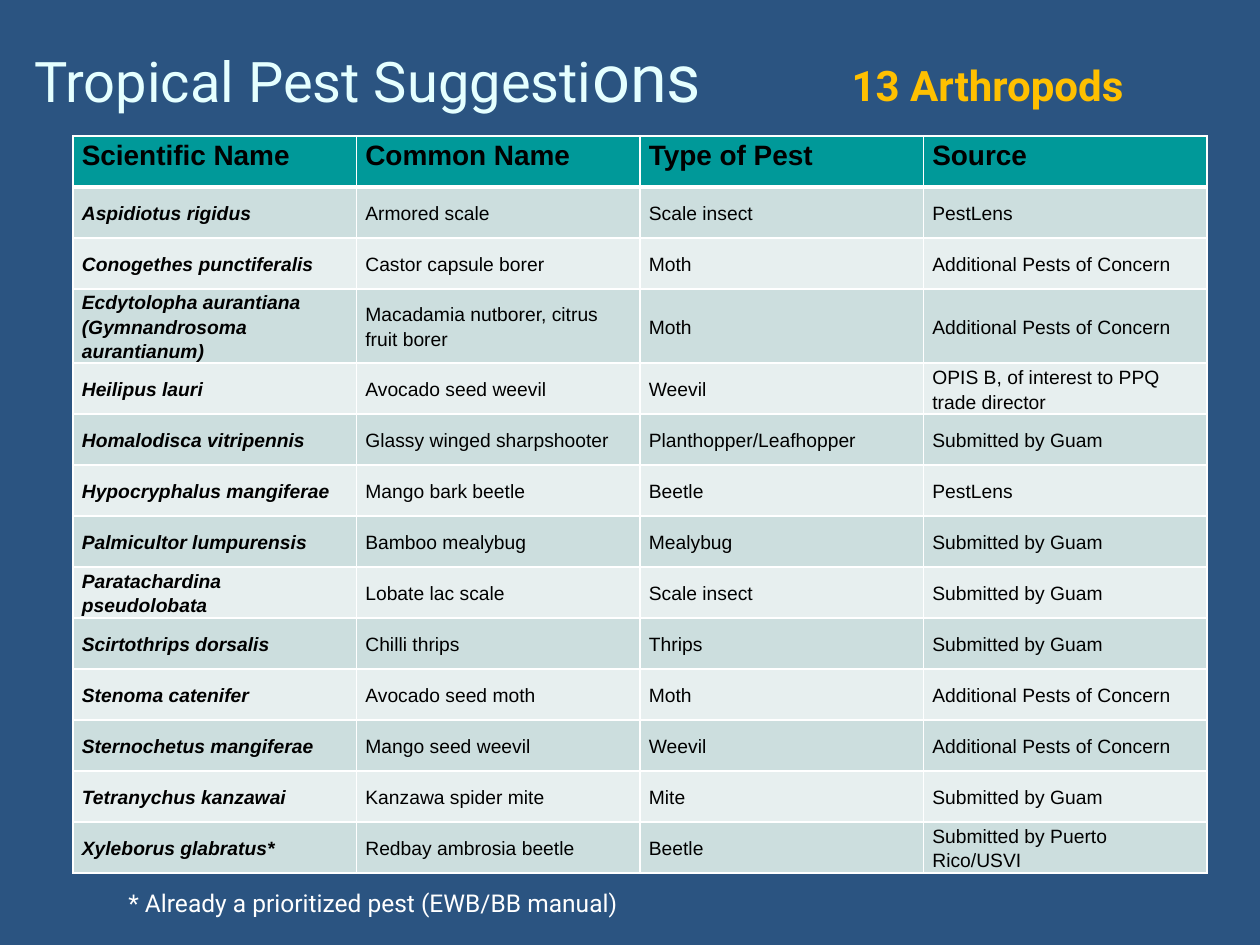
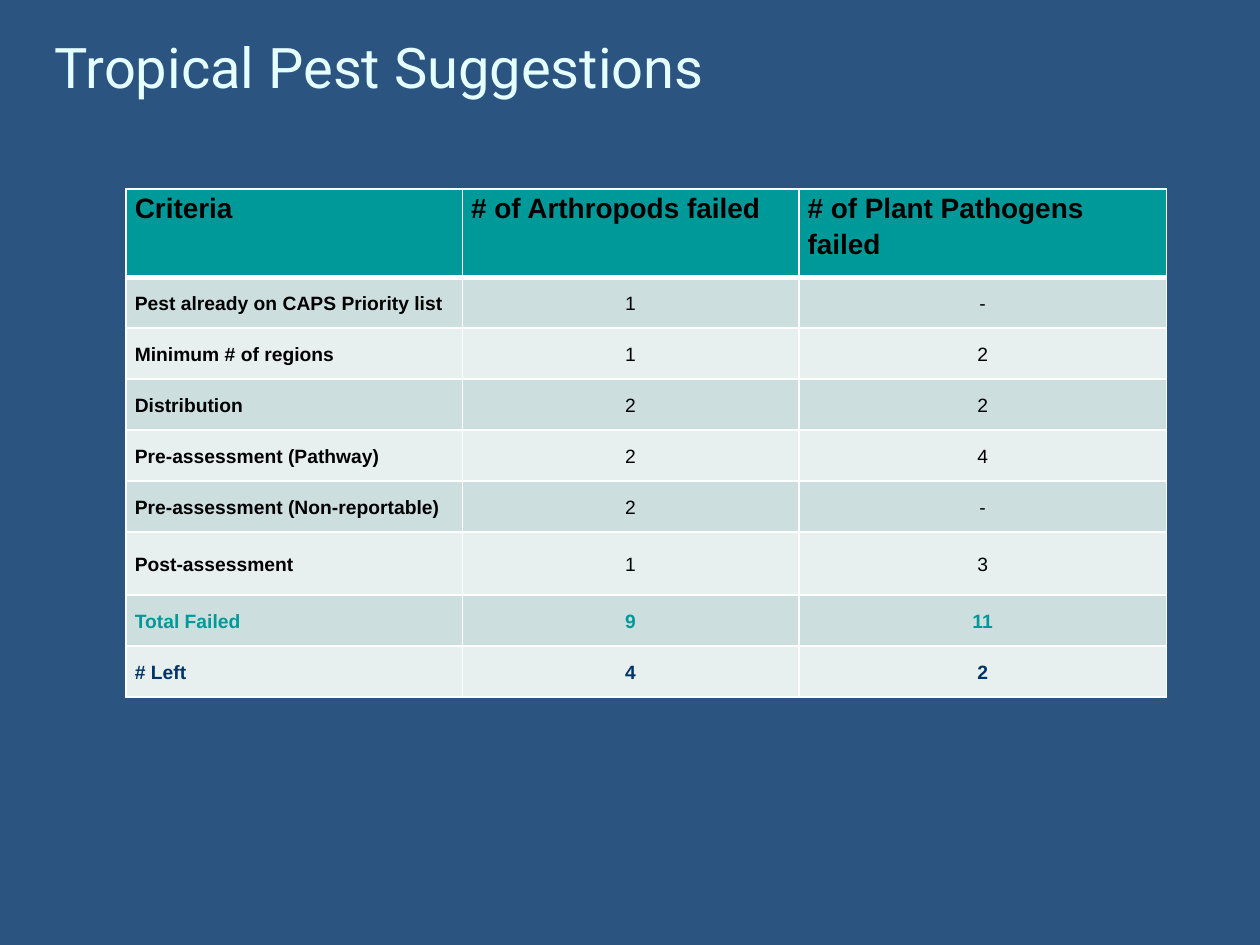
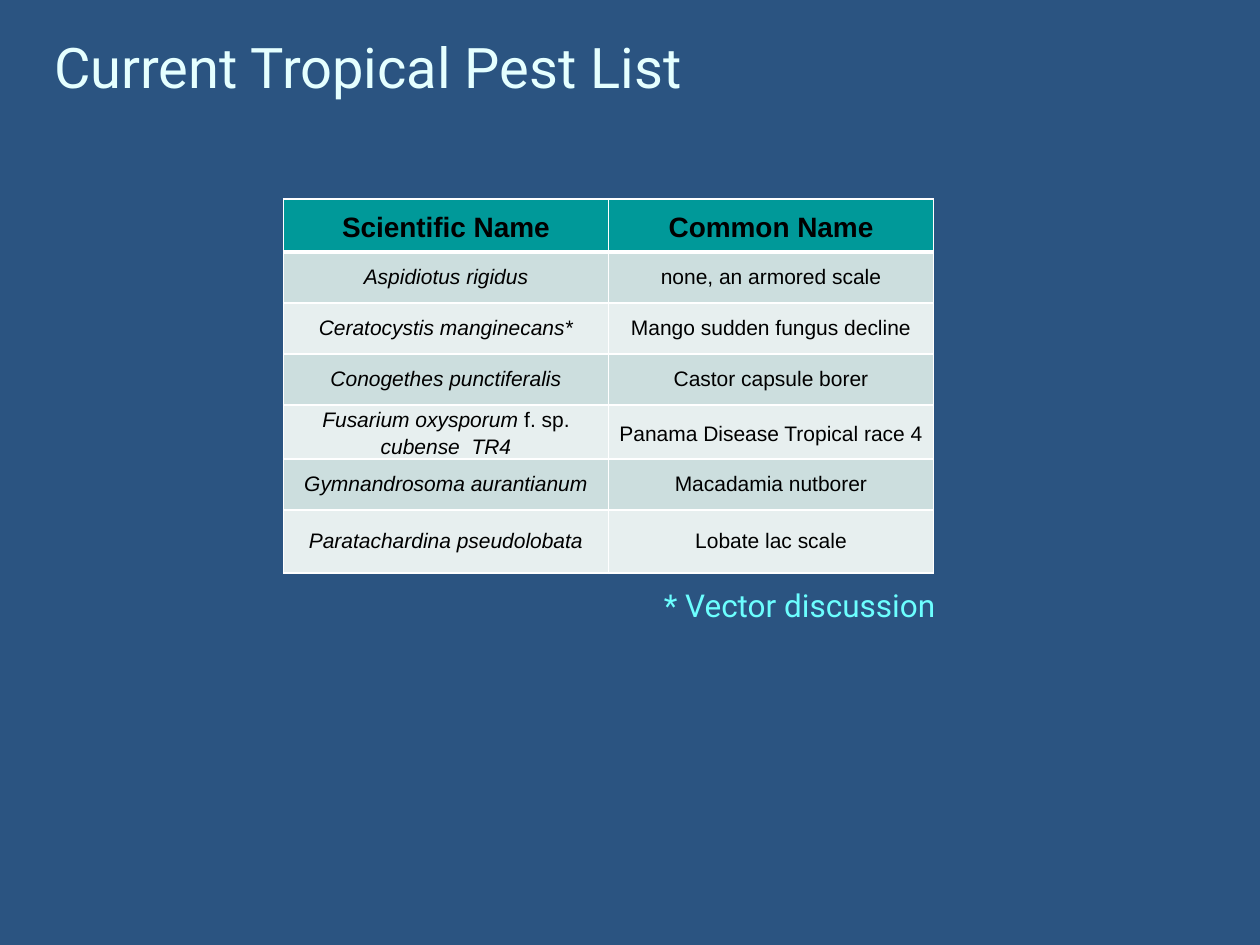
from dataclasses import dataclass
from lxml.etree import SubElement
from pptx import Presentation
from pptx.dml.color import RGBColor as RGB
from pptx.enum.text import MSO_ANCHOR as Anchor, MSO_AUTO_SIZE as AutoSize, PP_ALIGN as Align
from pptx.oxml.ns import qn
from pptx.util import Inches, Pt


@dataclass(frozen=True)
class Theme:
    heading_font: str = "Roboto"
    table_font: str = "Arial"
    background: str = "2B5481"
    title: str = "E5FFFF"
    header: str = "009999"
    bands: tuple = ("CCDEDE", "E7EFEF")
    ink: str = "000000"
    white: str = "FFFFFF"
    amber: str = "FFC000"
    cyan: str = "6CFFFF"
    navy: str = "003366"
    title_size: int = 32
    header_size: int = 16
    thin: int = 1
    thick: int = 3
    line_spacing: float = 1.15
    cell_inset: float = 0.07
    row: float = 5.67 / 14


THEME = Theme()
TITLE_BOX = (0.33, 0.15, 9, 0.75)

ARTHROPODS = [
    ("Scientific Name", "Common Name", "Type of Pest", "Source"),
    ("Aspidiotus rigidus", "Armored scale", "Scale insect", "PestLens"),
    ("Conogethes punctiferalis", "Castor capsule borer", "Moth", "Additional Pests of Concern"),
    ("Ecdytolopha aurantiana (Gymnandrosoma aurantianum)",
     "Macadamia nutborer, citrus fruit borer", "Moth", "Additional Pests of Concern"),
    ("Heilipus lauri", "Avocado seed weevil", "Weevil",
     "OPIS B, of interest to PPQ trade director"),
    ("Homalodisca vitripennis", "Glassy winged sharpshooter", "Planthopper/Leafhopper",
     "Submitted by Guam"),
    ("Hypocryphalus mangiferae", "Mango bark beetle", "Beetle", "PestLens"),
    ("Palmicultor lumpurensis", "Bamboo mealybug", "Mealybug", "Submitted by Guam"),
    ("Paratachardina pseudolobata", "Lobate lac scale", "Scale insect", "Submitted by Guam"),
    ("Scirtothrips dorsalis", "Chilli thrips", "Thrips", "Submitted by Guam"),
    ("Stenoma catenifer", "Avocado seed moth", "Moth", "Additional Pests of Concern"),
    ("Sternochetus mangiferae", "Mango seed weevil", "Weevil", "Additional Pests of Concern"),
    ("Tetranychus kanzawai", "Kanzawa spider mite", "Mite", "Submitted by Guam"),
    ("Xyleborus glabratus*", "Redbay ambrosia beetle", "Beetle",
     "Submitted by Puerto Rico/USVI"),
]

CRITERIA = [
    ("Criteria", "# of Arthropods failed", "# of Plant Pathogens failed"),
    ("Pest already on CAPS Priority list", "1", "-"),
    ("Minimum # of regions", "1", "2"),
    ("Distribution", "2", "2"),
    ("Pre-assessment (Pathway)", "2", "4"),
    ("Pre-assessment (Non-reportable)", "2", "-"),
    ("Post-assessment", "1", "3"),
    ("Total Failed", "9", "11"),
    ("# Left", "4", "2"),
]

CURRENT_PESTS = [
    ("Scientific Name", "Common Name"),
    ("Aspidiotus rigidus", "none, an armored scale"),
    ("Ceratocystis manginecans*", "Mango sudden fungus decline"),
    ("Conogethes punctiferalis", "Castor capsule borer"),
    (("Fusarium oxysporum ", "f. sp. ", "cubense  TR4"), "Panama Disease Tropical race 4"),
    ("Gymnandrosoma aurantianum", "Macadamia nutborer"),
    ("Paratachardina pseudolobata", "Lobate lac scale"),
]

SLIDES = [
    dict(
        title=[("Tropical Pest Suggesti", THEME.title_size), ("ons", 38)],
        title_box=(0.17, 0.1, 8.83, 1),
        table=dict(rows=ARTHROPODS, corner=(0.58, 1.08), widths=[2.25] * 4, heights={},
                   size=11, bold=True, italic=True),
        notes=[("13 Arthropods", (6.66, 0.42, 2.92, 0.5), 24, THEME.amber, True),
               ("* Already a prioritized pest (EWB/BB manual)", (0.92, 7, 5.92, 0.34),
                14, THEME.white, False)],
    ),
    dict(
        title=[("Tropical Pest Suggestions", THEME.title_size)],
        table=dict(rows=CRITERIA, corner=(1, 1.5), widths=[2.67, 2.67, 2.92],
                   heights={0: 0.7, 6: 0.5}, size=11, bold=True, centred=(1, 2),
                   totals={7: THEME.header, 8: THEME.navy}),
        notes=[],
    ),
    dict(
        title=[("Current Tropical Pest List", THEME.title_size)],
        table=dict(rows=CURRENT_PESTS, corner=(2.25, 1.58), widths=[2.58, 2.58],
                   heights={0: 0.42, 6: 0.5}, size=12, italic=True, centred=(0, 1),
                   centred_header=True, spacing=1.0),
        notes=[("* Vector discussion", (5.17, 4.6, 2.41, 0.4), 18, THEME.cyan, False)],
    ),
]


def style(run, font, size, colour, bold=False, italic=False):
    run.font.name = font
    run.font.size = Pt(size)
    run.font.color.rgb = RGB.from_string(colour)
    run.font.bold = bold
    run.font.italic = italic


def add_title(slide, pieces, box):
    title = slide.shapes.title
    title.left, title.top, title.width, title.height = map(Inches, box)
    frame = title.text_frame
    frame.auto_size = AutoSize.NONE
    frame.vertical_anchor = Anchor.MIDDLE
    line = frame.paragraphs[0]
    line.alignment = Align.LEFT
    for text, size in pieces:
        run = line.add_run()
        run.text = text
        style(run, THEME.heading_font, size, THEME.title)


def add_note(slide, text, box, size, colour, bold):
    frame = slide.shapes.add_textbox(*map(Inches, box)).text_frame
    frame.word_wrap = True
    frame.text = text
    style(frame.paragraphs[0].runs[0], THEME.heading_font, size, colour, bold)


def set_borders(cell, row):
    properties = cell._tc.get_or_add_tcPr()
    for side in "LRTB":
        under_header = (row, side) in ((0, "B"), (1, "T"))
        width = THEME.thick if under_header else THEME.thin
        edge = SubElement(properties, qn(f"a:ln{side}"), w=str(Pt(width)))
        fill = SubElement(edge, qn("a:solidFill"))
        SubElement(fill, qn("a:srgbClr"), val=THEME.white)


def fill_cell(cell, row, fill, anchor):
    set_borders(cell, row)
    cell.fill.solid()
    cell.fill.fore_color.rgb = RGB.from_string(fill)
    cell.vertical_anchor = anchor
    cell.margin_left = cell.margin_right = Inches(THEME.cell_inset)
    cell.margin_top = cell.margin_bottom = 0


def add_pest_table(slide, rows, corner, widths, heights, size, bold=False, italic=False,
                   centred=(), centred_header=False, totals={}, spacing=THEME.line_spacing):
    row_heights = [heights.get(r, THEME.row) for r in range(len(rows))]
    box = (*corner, sum(widths), sum(row_heights))
    table = slide.shapes.add_table(len(rows), len(widths), *map(Inches, box)).table
    for column, width in zip(table.columns, widths):
        column.width = Inches(width)
    for r, (values, height) in enumerate(zip(rows, row_heights)):
        table.rows[r].height = Inches(height)
        header = r == 0
        mixed = any(isinstance(value, tuple) for value in values)
        for c, value in enumerate(values):
            cell = table.cell(r, c)
            top = header and not centred_header
            fill_cell(cell, r, THEME.header if header else THEME.bands[(r - 1) % 2],
                      Anchor.TOP if top else Anchor.MIDDLE)
            line = cell.text_frame.paragraphs[0]
            line.alignment = Align.CENTER if c in centred and not top else Align.LEFT
            line.line_spacing = THEME.line_spacing if header or mixed else spacing
            for i, piece in enumerate(value if isinstance(value, tuple) else (value,)):
                run = line.add_run()
                run.text = piece
                style(run, THEME.table_font, THEME.header_size if header else size,
                      totals.get(r, THEME.ink),
                      header or r in totals or (bold and c == 0),
                      italic and c == 0 and not header and i % 2 == 0)


def main():
    deck = Presentation()
    deck.slide_width, deck.slide_height = Inches(10), Inches(7.5)
    backdrop = deck.slide_master.background.fill
    backdrop.solid()
    backdrop.fore_color.rgb = RGB.from_string(THEME.background)
    title_only = deck.slide_layouts.get_by_name("Title Only")
    for content in SLIDES:
        slide = deck.slides.add_slide(title_only)
        add_title(slide, content["title"], content.get("title_box", TITLE_BOX))
        add_pest_table(slide, **content["table"])
        for note in content["notes"]:
            add_note(slide, *note)
    deck.save("out.pptx")


if __name__ == "__main__":
    main()
